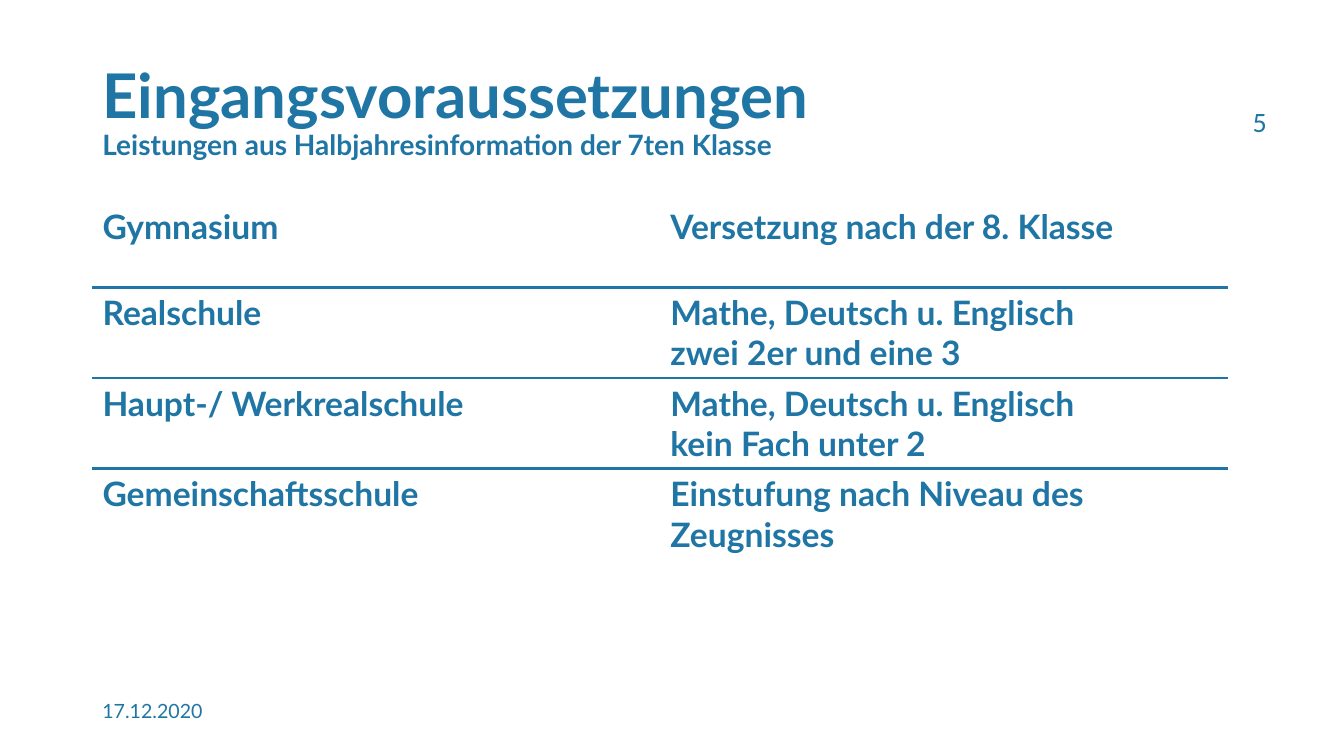
from dataclasses import dataclass

from lxml.etree import SubElement
from pptx import Presentation
from pptx.dml.color import RGBColor
from pptx.enum.text import MSO_ANCHOR as Anchor
from pptx.oxml.ns import qn
from pptx.util import Cm, Pt


@dataclass(frozen=True)
class Theme:
    blue: str = "1F75A4"
    font: str = "Lato"
    number_font: str = "Calibri"
    title: int = 44
    subtitle: int = 20
    table: int = 24
    date: int = 14
    number: int = 20
    rule: float = 2.25


THEME = Theme()
REQUIREMENTS = [
    ("Gymnasium", "Versetzung nach der 8. Klasse"),
    ("Realschule", "Mathe, Deutsch u. Englisch\vzwei 2er und eine 3"),
    ("Haupt-/ Werkrealschule", "Mathe, Deutsch u. Englisch\vkein Fach unter 2"),
    ("Gemeinschaftsschule", "Einstufung nach Niveau des Zeugnisses"),
]
ROW_HEIGHTS = (2.16, 2.16, 2.16, 3.73)


def style_font(font, size, bold=False, name=THEME.font):
    for key, value in {"size": Pt(size), "bold": bold, "name": name}.items():
        setattr(font, key, value)
    font.color.rgb = RGBColor.from_string(THEME.blue)


def add_text_box(s, box, anchor):
    """Add an empty wrapping text box and return its first paragraph."""
    tf = s.shapes.add_textbox(*map(Cm, box)).text_frame
    for key, value in {"word_wrap": True, "vertical_anchor": anchor}.items():
        setattr(tf, key, value)
    return tf.paragraphs[0]


def add_run(p, text, size, **font_format):
    r = p.add_run()
    r.text = text
    style_font(r.font, size, **font_format)


def add_title(s, title, subtitle):
    p = add_text_box(s, (2.33, 1.02, 29.21, 3.68), Anchor.MIDDLE)
    p.line_spacing = 0.9
    add_run(p, title, THEME.title, bold=True)
    p.add_line_break()
    add_run(p, subtitle, THEME.subtitle, bold=True)


def set_borders(cell, ruled_sides):
    """Rule the given sides (T, B) and clear the others."""
    tcPr = cell._tc.get_or_add_tcPr()
    for index, side in enumerate("LRTB"):
        ln = SubElement(tcPr, qn(f"a:ln{side}"), w=str(Pt(THEME.rule)))
        tcPr.insert(index, ln)
        if side in ruled_sides:
            fill = SubElement(ln, qn("a:solidFill"))
            SubElement(fill, qn("a:srgbClr"), val=THEME.blue)
        else:
            SubElement(ln, qn("a:noFill"))


def add_requirements_table(s, rows):
    box = map(Cm, (2.33, 5.08, 28.62, sum(ROW_HEIGHTS)))
    table = s.shapes.add_table(len(rows), 2, *box).table
    table.first_row = table.horz_banding = False
    for i, (texts, height) in enumerate(zip(rows, ROW_HEIGHTS)):
        table.rows[i].height = Cm(height)
        ruled_sides = ("T" if i else "") + ("B" if i < len(rows) - 1 else "")
        for j, text in enumerate(texts):
            cell = table.cell(i, j)
            cell.text = text
            cell.fill.background()
            set_borders(cell, ruled_sides)
            p = cell.text_frame.paragraphs[0]
            style_font(p.font, THEME.table, bold=True)
            for r in p.runs:
                style_font(r.font, THEME.table, bold=True)


def main():
    prs = Presentation()
    prs.slide_width, prs.slide_height = Cm(33.87), Cm(19.05)
    s = prs.slides.add_slide(prs.slide_layouts[6])
    add_title(s, "Eingangsvoraussetzungen",
              "Leistungen aus Halbjahresinformation der 7ten Klasse")
    add_requirements_table(s, REQUIREMENTS)
    date = add_text_box(s, (2.33, 17.4, 4.09, 1.02), Anchor.MIDDLE)
    add_run(date, "17.12.2020", THEME.date)
    number = add_text_box(s, (31.32, 2.51, 1.88, 1.02), Anchor.TOP)
    add_run(number, "5", THEME.number, name=THEME.number_font)
    prs.save("out.pptx")


if __name__ == "__main__":
    main()
